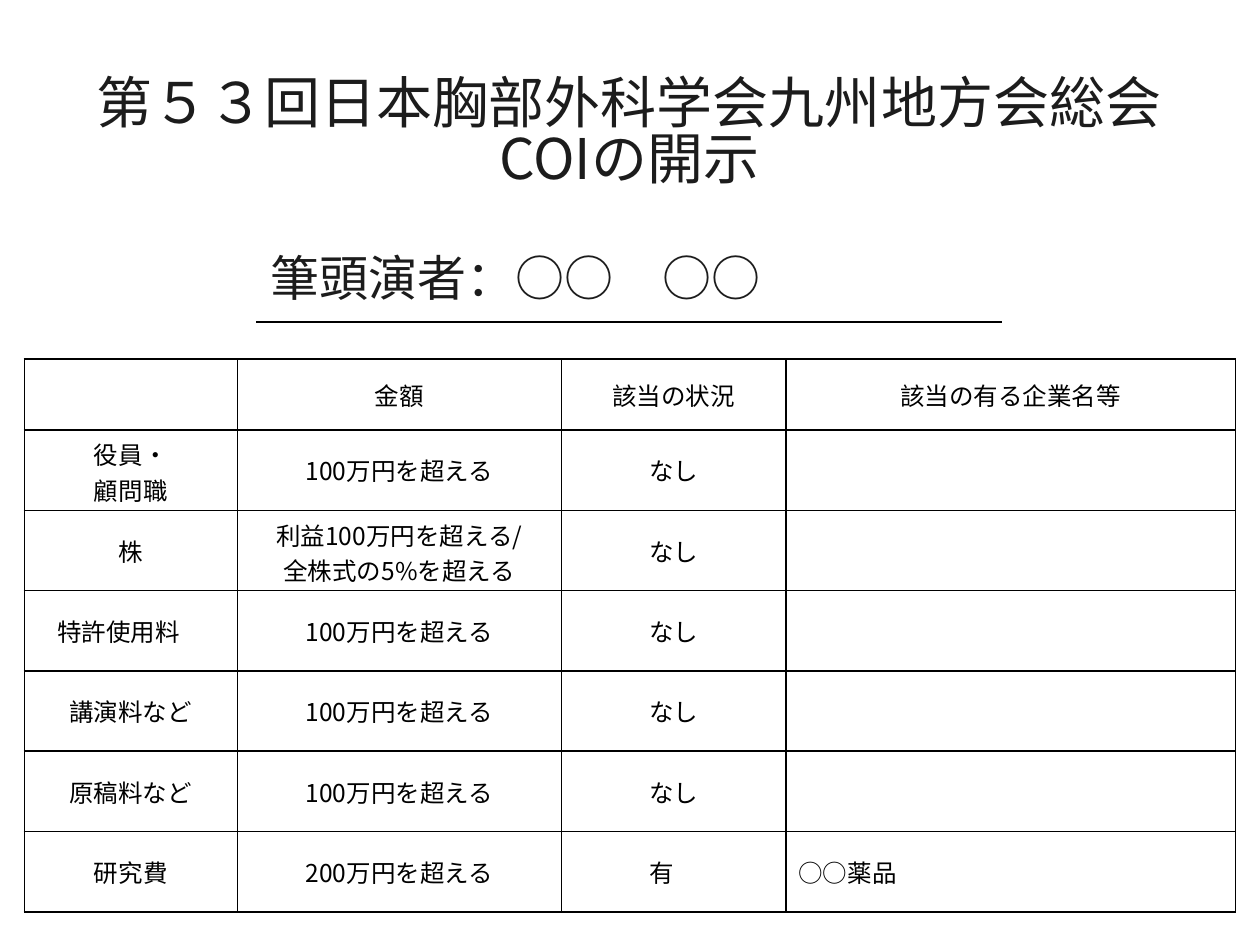
from lxml import etree
from pptx import Presentation
from pptx.dml.color import RGBColor
from pptx.enum.shapes import MSO_CONNECTOR
from pptx.enum.text import MSO_ANCHOR, PP_ALIGN
from pptx.oxml.ns import qn
from pptx.util import Pt

LEFT, CENTER = PP_ALIGN.LEFT, PP_ALIGN.CENTER
MIDDLE = MSO_ANCHOR.MIDDLE
STRAIGHT = MSO_CONNECTOR.STRAIGHT
FONT = "Noto Sans CJK JP"
COLORS = {"heading": "1C1C1C", "table": "000000"}


def write_line(para, text, size, color, align):
    para.alignment = align
    for index, part in enumerate(text.split("\n")):
        if index:
            para.add_line_break()
        span = para.add_run()
        span.text = part
        span.font.size = Pt(size)
        span.font.name = FONT
        span.font.color.rgb = RGBColor.from_string(COLORS[color])
        etree.SubElement(span.font._element, qn("a:ea"), typeface=FONT)


def draw_borders(cell):
    properties = cell._tc.get_or_add_tcPr()
    for index, side in enumerate(("a:lnL", "a:lnR", "a:lnT", "a:lnB")):
        border = etree.Element(qn(side), w=str(Pt(1)))
        fill = etree.SubElement(border, qn("a:solidFill"))
        etree.SubElement(fill, qn("a:srgbClr"), val=COLORS["table"])
        properties.insert(index, border)


deck = Presentation()
deck.slide_width, deck.slide_height = Pt(720), Pt(540)
page = deck.slides.add_slide(deck.slide_layouts[6])

headings = [
    (35.3, 34.6, 648.7, 85, 32, CENTER, ["第５３回日本胸部外科学会九州地方会総会", "COIの開示"]),
    (147.6, 140.4, 427.7, 41, 28, LEFT, ["筆頭演者：○○　○○"]),
]
for left, top, width, height, size, align, lines in headings:
    box = page.shapes.add_textbox(Pt(left), Pt(top), Pt(width), Pt(height))
    frame = box.text_frame
    frame.word_wrap = True
    frame.vertical_anchor = MIDDLE
    for index, line in enumerate(lines):
        para = frame.add_paragraph() if index else frame.paragraphs[0]
        para.line_spacing = 0.83
        write_line(para, line, size, "heading", align)

underline = page.shapes.add_connector(STRAIGHT, Pt(146.4), Pt(184), Pt(572.6), Pt(184))
underline.line.color.rgb = RGBColor.from_string(COLORS["table"])
underline.line.width = Pt(1)
etree.SubElement(underline._element.spPr, qn("a:effectLst"))

rows = [
    ("", "金額", "該当の状況", "該当の有る企業名等"),
    ("役員・\n顧問職", "100万円を超える", "なし", ""),
    ("株", "利益100万円を超える/\n全株式の5%を超える", "なし", ""),
    ("特許使用料　", "100万円を超える", "なし", ""),
    ("講演料など", "100万円を超える", "なし", ""),
    ("原稿料など", "100万円を超える", "なし", ""),
    ("研究費", "200万円を超える", "有　", "○○薬品"),
]
widths = [121.7, 185.3, 128.2, 256.9]
heights = [40.5] + [45.9] * 6
table = page.shapes.add_table(
    len(rows), len(widths), Pt(13.9), Pt(205.2), Pt(sum(widths)), Pt(sum(heights))
).table
for column, width in zip(table.columns, widths):
    column.width = Pt(width)
for row, height, texts in zip(table.rows, heights, rows):
    row.height = Pt(height)
    for cell, text in zip(row.cells, texts):
        cell.vertical_anchor = MIDDLE
        cell.fill.background()
        draw_borders(cell)
        if text:
            align = LEFT if text == "○○薬品" else CENTER
            write_line(cell.text_frame.paragraphs[0], text, 14, "table", align)
table.first_row = False
table.horz_banding = False

deck.save("out.pptx")
